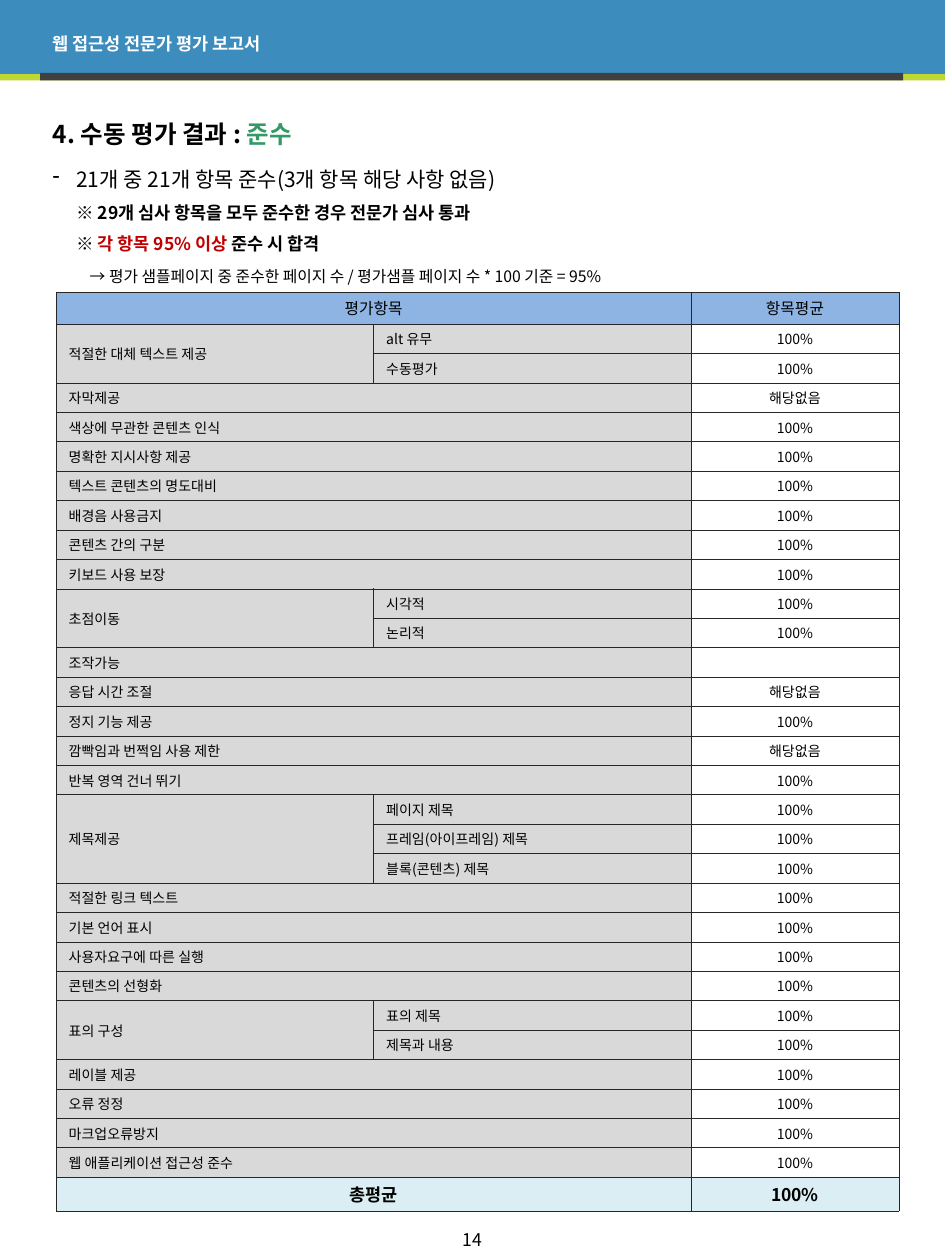
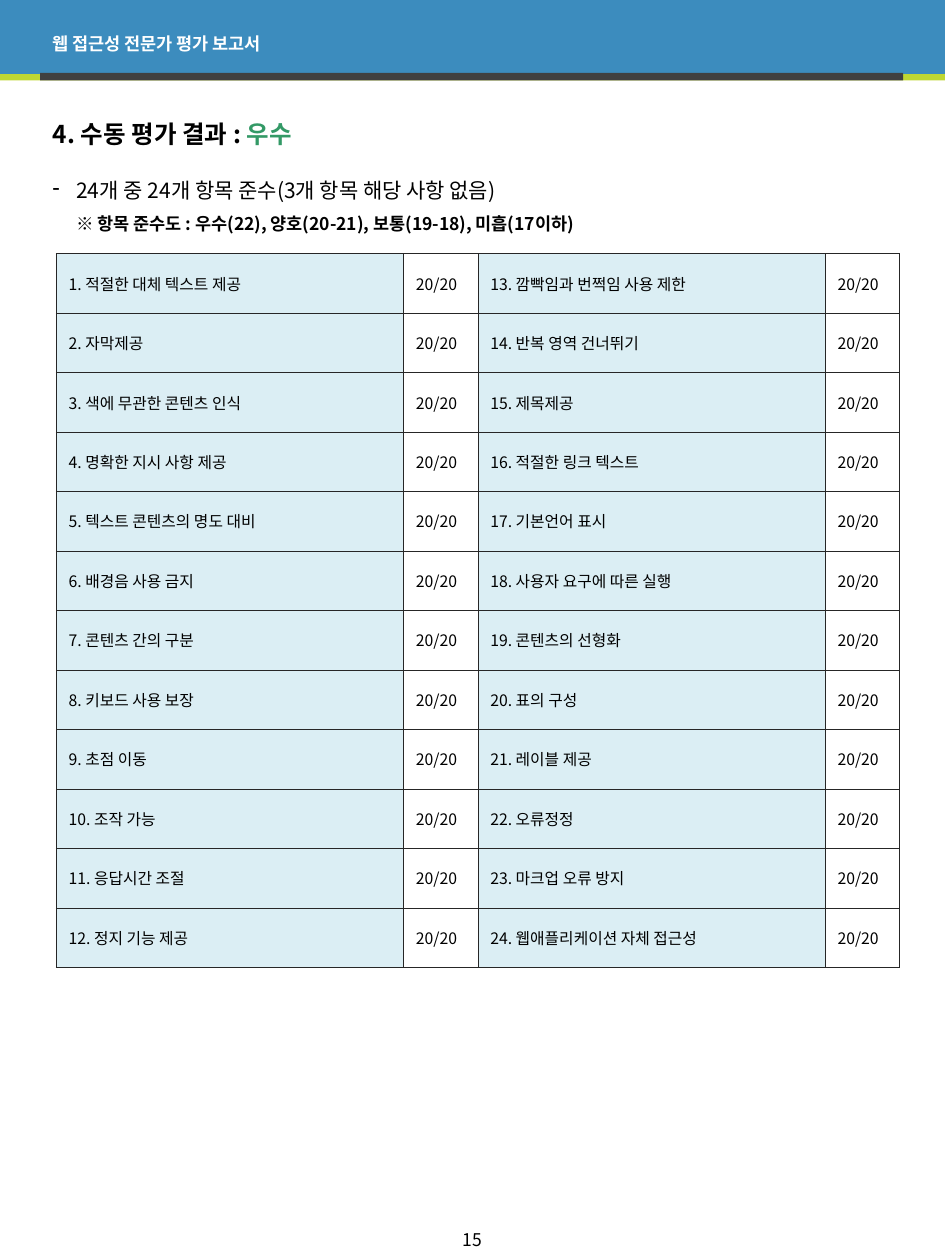
from lxml.etree import SubElement
from pptx import Presentation
from pptx.dml.color import RGBColor
from pptx.enum.shapes import MSO_SHAPE
from pptx.enum.text import MSO_ANCHOR, MSO_AUTO_SIZE, PP_ALIGN
from pptx.oxml.ns import qn
from pptx.util import Cm, Pt

FONT = "Noto Sans CJK KR"
COLORS = {
    "black": "000000", "white": "FFFFFF", "blue": "3C8CBE", "lime": "BED732",
    "dark": "404040", "green": "339966", "red": "C00000", "border": "262626",
    "header": "8EB4E3", "gray": "D9D9D9", "pale": "DBEEF4",
}


def write(paragraph, spans, size, bold=False, align=PP_ALIGN.LEFT):
    """Fill a paragraph with (text, colour) spans."""
    paragraph.alignment = align
    for text, color in spans:
        span = paragraph.add_run()
        span.text = text
        span.font.name = FONT
        span.font.size = Pt(size)
        span.font.bold = bold
        span.font.color.rgb = RGBColor.from_string(COLORS[color])
        SubElement(span.font._element, qn("a:ea"), typeface=FONT)


def fill_cell(cell, text, fill, size, bold=False, align=PP_ALIGN.LEFT):
    """Give a table cell its text, thin borders and fill."""
    cell.vertical_anchor = MSO_ANCHOR.MIDDLE
    cell.margin_top = cell.margin_bottom = Cm(0.09)
    paragraph = cell.text_frame.paragraphs[0]
    if text:
        write(paragraph, [(text, "black")], size, bold, align)
    else:
        SubElement(paragraph._p, qn("a:endParaRPr"), sz=str(size * 100))
    properties = cell._tc.get_or_add_tcPr()
    for side in ("a:lnL", "a:lnR", "a:lnT", "a:lnB"):
        line = SubElement(properties, qn(side), w=str(Pt(0.25)))
        line_fill = SubElement(line, qn("a:solidFill"))
        SubElement(line_fill, qn("a:srgbClr"), val=COLORS["border"])
    cell.fill.solid()
    cell.fill.fore_color.rgb = RGBColor.from_string(COLORS[fill])


deck = Presentation()
deck.slide_width, deck.slide_height = Cm(19.05), Cm(25.4)
layout = deck.slide_layouts[5]
for holder in list(layout.placeholders):
    if holder.placeholder_format.idx != 0:
        holder.element.getparent().remove(holder.element)

# Heading, result lines and page number of each page
# A line holds: indent, size, bold, spans
page_texts = [
    (14, "준수", 3.1, 2.82, [
        (0.48, 12, False, [("21개 중 21개 항목 준수(3개 항목 해당 사항 없음)", "black")]),
        (0.48, 10, True, [("※ 29개 심사 항목을 모두 준수한 경우 전문가 심사 통과", "black")]),
        (0.48, 10, True, [("※ ", "black"), ("각 항목 95% 이상 ", "red"),
                          ("준수 시 합격", "black")]),
        (0.75, 9, False, [("→ 평가 샘플페이지 중 준수한 페이지 수 / "
                           "평가샘플 페이지 수 * 100 기준 = 95%", "black")]),
    ]),
    (15, "우수", 3.33, 1.45, [
        (0.48, 12, False, [("24개 중 24개 항목 준수(3개 항목 해당 사항 없음)", "black")]),
        (0.48, 10, True, [("※ 항목 준수도 : 우수(22), 양호(20-21), 보통(19-18), "
                           "미흡(17이하)", "black")]),
    ]),
]
pages = []
for number, verdict, top, height, lines in page_texts:
    page = deck.slides.add_slide(layout)
    pages.append(page)

    title = page.shapes.title
    title.left, title.top, title.width, title.height = Cm(0.81), Cm(2.11), Cm(17.4), Cm(1.19)
    title.text_frame.auto_size = MSO_AUTO_SIZE.NONE
    title.text_frame.vertical_anchor = MSO_ANCHOR.MIDDLE
    write(title.text_frame.paragraphs[0],
          [("4. 수동 평가 결과 : ", "black"), (verdict, "green")], 14, True)

    box = page.shapes.add_textbox(Cm(0.81), Cm(top), Cm(17.4), Cm(height))
    box.text_frame.word_wrap = True
    for index, (indent, size, bold, spans) in enumerate(lines):
        paragraph = (box.text_frame.add_paragraph() if index
                     else box.text_frame.paragraphs[0])
        properties = paragraph._p.get_or_add_pPr()
        properties.set("marL", str(Cm(indent)))
        if index == 0:
            properties.set("indent", str(-Cm(indent)))
            SubElement(properties, qn("a:buChar"), char="-")
        paragraph.line_spacing = Pt(18)
        write(paragraph, spans, size, bold)

    footer = page.shapes.add_textbox(0, Cm(24.51), deck.slide_width, Cm(0.94))
    footer.text_frame.word_wrap = True
    footer.text_frame.vertical_anchor = MSO_ANCHOR.MIDDLE
    write(footer.text_frame.paragraphs[0], [(str(number), "black")], 10,
          align=PP_ALIGN.CENTER)

# Header bands and report name, moved to the shared layout
header_parts = []
for color, left, top, width, height in [
    ("lime", 0, 1.47, 19.05, 0.15),
    ("blue", 0, 0, 19.05, 1.49),
    ("dark", 0.81, 1.47, 17.4, 0.15),
]:
    band = pages[0].shapes.add_shape(
        MSO_SHAPE.RECTANGLE, Cm(left), Cm(top), Cm(width), Cm(height))
    band.shadow.inherit = False
    band.fill.solid()
    band.fill.fore_color.rgb = RGBColor.from_string(COLORS[color])
    band.line.fill.background()
    header_parts.append(band)
report_name = pages[0].shapes.add_textbox(Cm(0.81), Cm(0.28), Cm(17.4), Cm(1.19))
report_name.text_frame.word_wrap = True
report_name.text_frame.vertical_anchor = MSO_ANCHOR.MIDDLE
write(report_name.text_frame.paragraphs[0],
      [("웹 접근성 전문가 평가 보고서", "white")], 10, True)
for part in header_parts + [report_name]:
    layout.shapes.element.append(part.element)

# Page 14: average per item, with sub-items where there are any
items = [
    ("적절한 대체 텍스트 제공", ["alt 유무", "수동평가"]),
    ("자막제공", []),
    ("색상에 무관한 콘텐츠 인식", []),
    ("명확한 지시사항 제공", []),
    ("텍스트 콘텐츠의 명도대비", []),
    ("배경음 사용금지", []),
    ("콘텐츠 간의 구분", []),
    ("키보드 사용 보장", []),
    ("초점이동", ["시각적", "논리적"]),
    ("조작가능", []),
    ("응답 시간 조절", []),
    ("정지 기능 제공", []),
    ("깜빡임과 번쩍임 사용 제한", []),
    ("반복 영역 건너 뛰기", []),
    ("제목제공", ["페이지 제목", "프레임(아이프레임) 제목", "블록(콘텐츠) 제목"]),
    ("적절한 링크 텍스트", []),
    ("기본 언어 표시", []),
    ("사용자요구에 따른 실행", []),
    ("콘텐츠의 선형화", []),
    ("표의 구성", ["표의 제목", "제목과 내용"]),
    ("레이블 제공", []),
    ("오류 정정", []),
    ("마크업오류방지", []),
    ("웹 애플리케이션 접근성 준수", []),
]
special_averages = {
    "자막제공": "해당없음", "조작가능": "", "응답 시간 조절": "해당없음",
    "깜빡임과 번쩍임 사용 제한": "해당없음",
}
item_rows = sum(max(1, len(subs)) for name, subs in items)
last = item_rows + 1
averages = pages[0].shapes.add_table(
    last + 1, 3, Cm(1.13), Cm(5.89), Cm(16.99), Cm(18.53)).table
averages.first_row = averages.horz_banding = False
for column, width in zip(averages.columns, (6.4, 6.4, 4.19)):
    column.width = Cm(width)
for row in averages.rows:
    row.height = Cm(17.2 / item_rows)
averages.rows[0].height = Cm(0.64)
averages.rows[last].height = Cm(0.69)

for row, name, average, fill, size, bold in [
    (0, "평가항목", "항목평균", "header", 9, False),
    (last, "총평균", "100%", "pale", 10, True),
]:
    for column, text in enumerate((name, "", average)):
        fill_cell(averages.cell(row, column), text, fill, size, bold, PP_ALIGN.CENTER)
    averages.cell(row, 0).merge(averages.cell(row, 1))

row = 1
for name, subs in items:
    first = row
    for sub in subs or [""]:
        fill_cell(averages.cell(row, 0), name if row == first else "", "gray", 8)
        fill_cell(averages.cell(row, 1), sub, "gray", 8)
        fill_cell(averages.cell(row, 2), special_averages.get(name, "100%"),
                  "white", 8, align=PP_ALIGN.CENTER)
        row += 1
    averages.cell(first, 0).merge(averages.cell(row - 1, 0 if subs else 1))

# Page 15: score of the 24 items, numbered down two column pairs
scored_items = [
    "적절한 대체 텍스트 제공", "자막제공", "색에 무관한 콘텐츠 인식",
    "명확한 지시 사항 제공", "텍스트 콘텐츠의 명도 대비", "배경음 사용 금지",
    "콘텐츠 간의 구분", "키보드 사용 보장", "초점 이동", "조작 가능",
    "응답시간 조절", "정지 기능 제공", "깜빡임과 번쩍임 사용 제한",
    "반복 영역 건너뛰기", "제목제공", "적절한 링크 텍스트", "기본언어 표시",
    "사용자 요구에 따른 실행", "콘텐츠의 선형화", "표의 구성", "레이블 제공",
    "오류정정", "마크업 오류 방지", "웹애플리케이션 자체 접근성",
]
half = len(scored_items) // 2
scores = pages[1].shapes.add_table(
    half, 4, Cm(1.13), Cm(5.11), Cm(17), Cm(1.2 * half)).table
scores.first_row = scores.horz_banding = False
for column, width in zip(scores.columns, (7, 1.5, 7, 1.5)):
    column.width = Cm(width)
for index, name in enumerate(scored_items):
    row, column = index % half, index // half * 2
    fill_cell(scores.cell(row, column), f"{index + 1}. {name}", "pale", 9)
    fill_cell(scores.cell(row, column + 1), "20/20", "white", 9)

deck.save("out.pptx")
